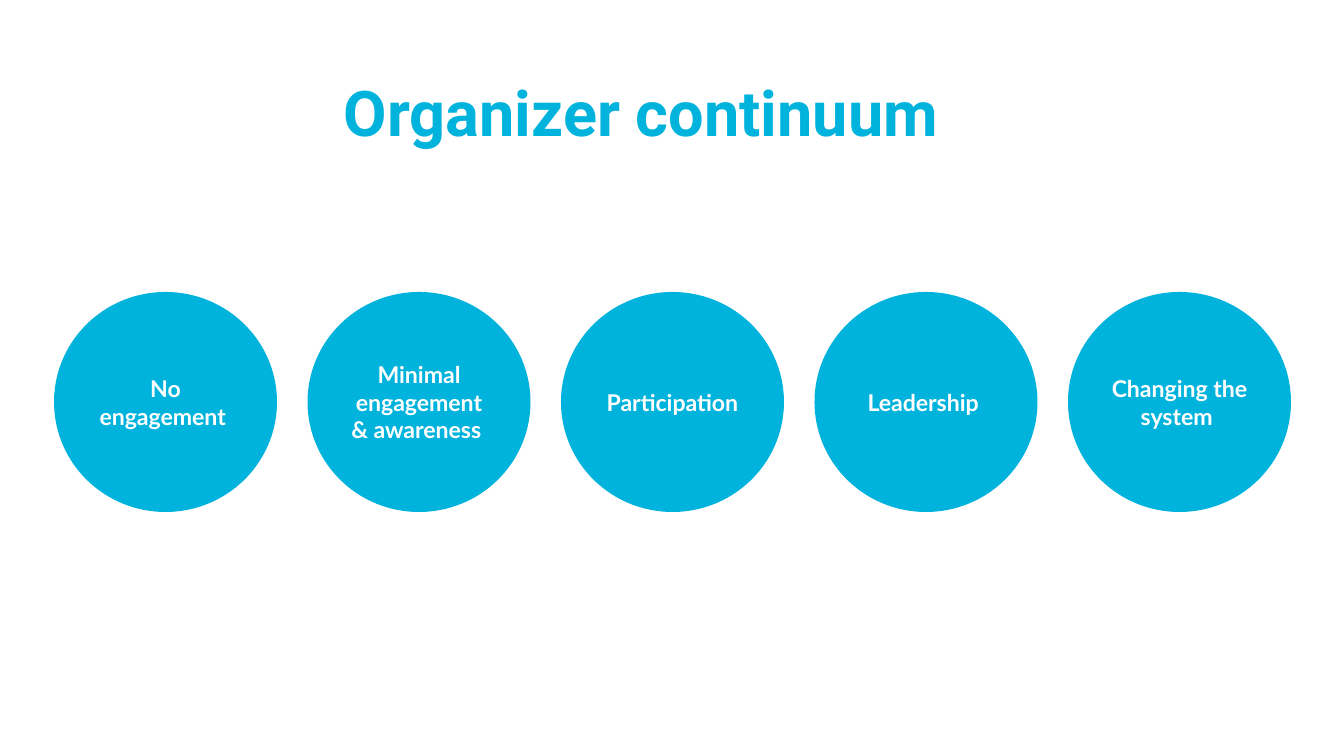
from dataclasses import dataclass

from pptx import Presentation
from pptx.dml.color import RGBColor
from pptx.enum.shapes import MSO_SHAPE
from pptx.enum.text import MSO_ANCHOR, PP_ALIGN
from pptx.util import Pt

PX = 914400 / 100.8  # EMU in one px


@dataclass(frozen=True)
class Theme:
    cyan: RGBColor = RGBColor(0x00, 0xB3, 0xDC)
    white: RGBColor = RGBColor(0xFF, 0xFF, 0xFF)
    title_font: str = "Roboto"
    stage_font: str = "Lato"
    title_size: float = 45
    stage_size: float = 16.5


THEME = Theme()

# Trailing spaces shift the last centred line slightly left
STAGES = [
    "No engagement ",
    "Minimal engagement & awareness ",
    "Participation",
    "Leadership ",
    "Changing the system ",
]


def px(*lengths):
    return [round(n * PX) for n in lengths]


def set_attrs(obj, values):
    for name, value in values.items():
        setattr(obj, name, value)


def write(tf, text, font, size, color, frame, para):
    set_attrs(tf, frame)
    p = tf.paragraphs[0]
    set_attrs(p, para)
    r = p.add_run()
    r.text = text
    set_attrs(r.font, {"name": font, "size": Pt(size), "bold": True})
    r.font.color.rgb = color


def add_title(s, text, left, top, width, height):
    sp = s.shapes.add_textbox(*px(left, top, width, height))
    side, end = px(7, 4)
    frame = {"word_wrap": True, "margin_left": side, "margin_right": side,
             "margin_top": end, "margin_bottom": end}
    write(sp.text_frame, text, THEME.title_font, THEME.title_size, THEME.cyan,
          frame, {"line_spacing": 0.8})


def add_continuum(s, stages, left, top, width, height, circle_width):
    # Circles spread evenly from edge to edge of the box
    pitch = (width - circle_width) / (len(stages) - 1)
    for i, stage in enumerate(stages):
        sp = s.shapes.add_shape(
            MSO_SHAPE.OVAL, *px(left + i * pitch, top, circle_width, height))
        sp.shadow.inherit = False
        sp.fill.solid()
        sp.fill.fore_color.rgb = THEME.cyan
        sp.line.fill.background()
        write(sp.text_frame, stage, THEME.stage_font, THEME.stage_size,
              THEME.white,
              {"word_wrap": True, "vertical_anchor": MSO_ANCHOR.MIDDLE},
              {"alignment": PP_ALIGN.CENTER})


def main():
    prs = Presentation()
    prs.slide_width, prs.slide_height = px(1344, 756)
    s = prs.slides.add_slide(prs.slide_layouts[6])

    # Heading
    add_title(s, "Organizer continuum", 337, 84, 671, 70)
    # Row of stages
    add_continuum(s, STAGES, 54, 292, 1237, 220, circle_width=223)

    prs.save("out.pptx")


if __name__ == "__main__":
    main()
